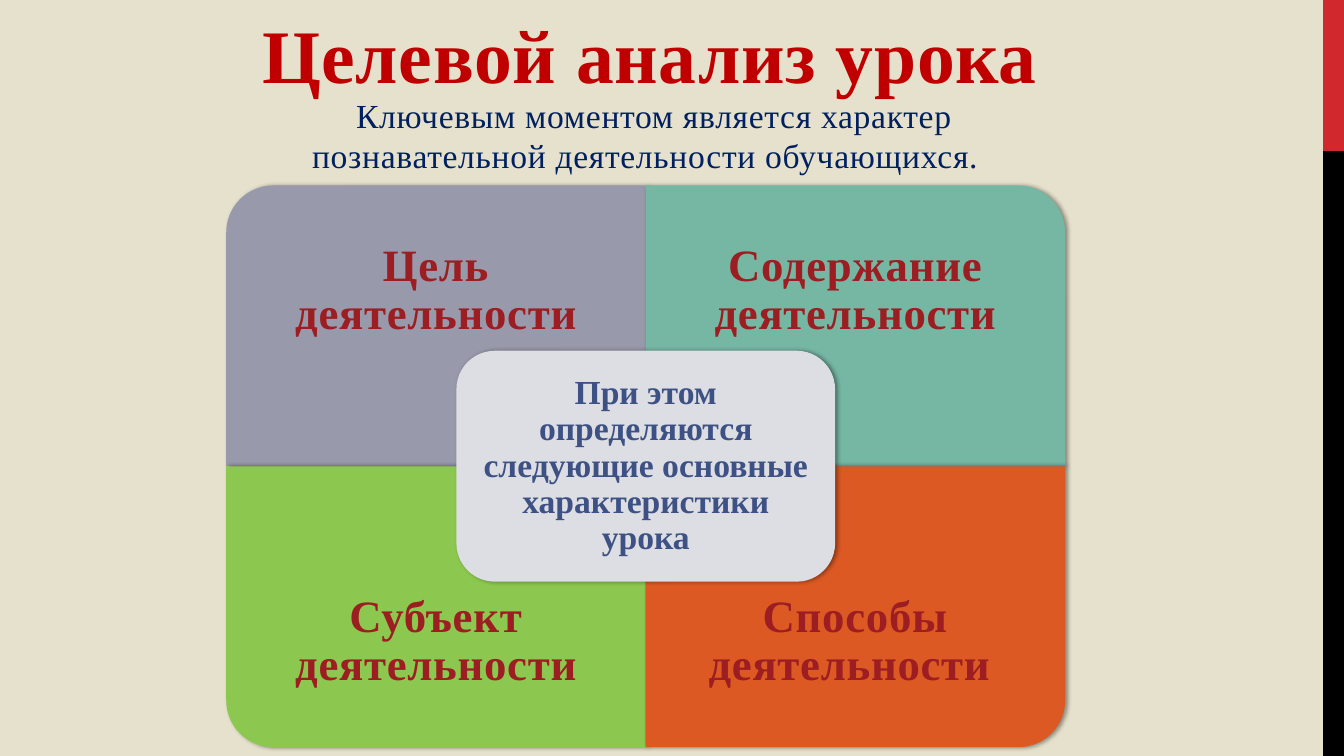
"""Build the slide on goal analysis of a lesson with a four-part matrix."""
from dataclasses import dataclass

from lxml.etree import SubElement
from pptx import Presentation
from pptx.dml.color import RGBColor
from pptx.enum.shapes import MSO_SHAPE
from pptx.enum.text import MSO_ANCHOR, PP_ALIGN
from pptx.oxml.ns import qn
from pptx.util import Pt

COLORS = {
    "background": "E6E1CC", "red": "D1282E", "black": "000000",
    "title": "C00000", "subtitle": "002060", "tile_text": "9D1E22",
    "gray": "989AAC", "teal": "76B7A3", "green": "8CC74F", "orange": "DC5924",
    "center": "DDDEE3", "center_text": "3D5185",
}
FONT = "Times New Roman"
MATRIX_LEFT, MATRIX_TOP = 161.6, 132.5
TILE_WIDTH, TILE_HEIGHT = 299.6, 200.6
TILE_TEXT_HEIGHT = 150.5


@dataclass(frozen=True)
class Frame:
    left: float
    top: float
    width: float
    height: float

    def lengths(self) -> tuple:
        return tuple(Pt(v) for v in (self.left, self.top, self.width, self.height))

    def quarter_turned(self) -> "Frame":
        shift = (self.width - self.height) / 2
        return Frame(self.left + shift, self.top - shift, self.height, self.width)


@dataclass(frozen=True)
class TextStyle:
    size: float
    color: str
    bold: bool = True
    tracking: int = 50
    line_spacing: float = 1.0
    anchor: MSO_ANCHOR = MSO_ANCHOR.MIDDLE
    side_inset: float = 7.2
    end_inset: float = 3.6


@dataclass(frozen=True)
class Tile:
    text: str
    color: str
    column: int
    row: int
    rotation: int


TITLE = TextStyle(54, "title", anchor=MSO_ANCHOR.BOTTOM)
SUBTITLE = TextStyle(24, "subtitle", bold=False, anchor=MSO_ANCHOR.TOP)
TILE_TEXT = TextStyle(32, "tile_text", line_spacing=0.9, side_inset=18, end_inset=18)
CENTER_TEXT = TextStyle(24, "center_text", tracking=0, line_spacing=0.9, end_inset=7.2)

TILES = (
    Tile("Цель деятельности", "gray", 0, 0, 270),
    Tile("Содержание деятельности", "teal", 1, 0, 0),
    Tile("Субъект деятельности", "green", 0, 1, 180),
    Tile("Способы деятельности ", "orange", 1, 1, 90),
)


def rgb(name: str) -> RGBColor:
    return RGBColor.from_string(COLORS[name])


def apply(target, values: dict) -> None:
    for name, value in values.items():
        setattr(target, name, value)


def write(box, text: str, style: TextStyle) -> None:
    apply(box.text_frame, {
        "word_wrap": True, "vertical_anchor": style.anchor,
        "margin_left": Pt(style.side_inset), "margin_right": Pt(style.side_inset),
        "margin_top": Pt(style.end_inset), "margin_bottom": Pt(style.end_inset),
    })
    para = box.text_frame.paragraphs[0]
    apply(para, {"alignment": PP_ALIGN.CENTER, "line_spacing": style.line_spacing})
    span = para.add_run()
    span.text = text
    apply(span.font, {"name": FONT, "size": Pt(style.size), "bold": style.bold})
    span.font.color.rgb = rgb(style.color)
    span.font._element.set("spc", str(style.tracking))


def add_text(page, frame: Frame, text: str, style: TextStyle) -> None:
    write(page.shapes.add_textbox(*frame.lengths()), text, style)


def add_block(page, kind: MSO_SHAPE, frame: Frame, color: str, rotation: int = 0):
    block = page.shapes.add_shape(kind, *frame.lengths())
    block.rotation = rotation
    block.shadow.inherit = False
    block.fill.solid()
    block.fill.fore_color.rgb = rgb(color)
    block.line.fill.background()
    return block


def cast_shadow(block) -> None:
    effects = block._element.spPr.find(qn("a:effectLst"))
    shadow = SubElement(effects, qn("a:outerShdw"), blurRad=str(Pt(3.1)),
                        dist=str(Pt(1.8)), dir="0", rotWithShape="0")
    shade = SubElement(shadow, qn("a:srgbClr"), val=COLORS["black"])
    SubElement(shade, qn("a:alpha"), val="40000")


def add_tile(page, tile: Tile) -> None:
    left = MATRIX_LEFT + tile.column * TILE_WIDTH
    top = MATRIX_TOP + tile.row * TILE_HEIGHT
    frame = Frame(left, top, TILE_WIDTH, TILE_HEIGHT)
    if tile.rotation % 180:
        frame = frame.quarter_turned()
    cast_shadow(add_block(page, MSO_SHAPE.ROUND_1_RECTANGLE, frame, tile.color, tile.rotation))
    text_top = top + tile.row * (TILE_HEIGHT - TILE_TEXT_HEIGHT)
    add_text(page, Frame(left, text_top, TILE_WIDTH, TILE_TEXT_HEIGHT), tile.text, TILE_TEXT)


def main() -> None:
    deck = Presentation()
    apply(deck, {"slide_width": Pt(960), "slide_height": Pt(540)})
    page = deck.slides.add_slide(deck.slide_layouts[6])
    page.background.fill.solid()
    page.background.fill.fore_color.rgb = rgb("background")

    add_block(page, MSO_SHAPE.RECTANGLE, Frame(945, 0, 15, 108), "red")
    add_block(page, MSO_SHAPE.RECTANGLE, Frame(945, 108, 15, 432), "black")
    add_text(page, Frame(164, 7, 600.5, 67), "Целевой анализ урока", TITLE)
    add_text(page, Frame(182, 64, 564.5, 65.5),
             " Ключевым моментом является характер познавательной деятельности обучающихся. ",
             SUBTITLE)
    for tile in TILES:
        add_tile(page, tile)
    center = add_block(page, MSO_SHAPE.ROUNDED_RECTANGLE,
                       Frame(326, 250.5, 270.5, 165), "center")
    cast_shadow(center)
    write(center, "При этом определяются следующие основные характеристики урока", CENTER_TEXT)
    deck.save("out.pptx")


if __name__ == "__main__":
    main()
